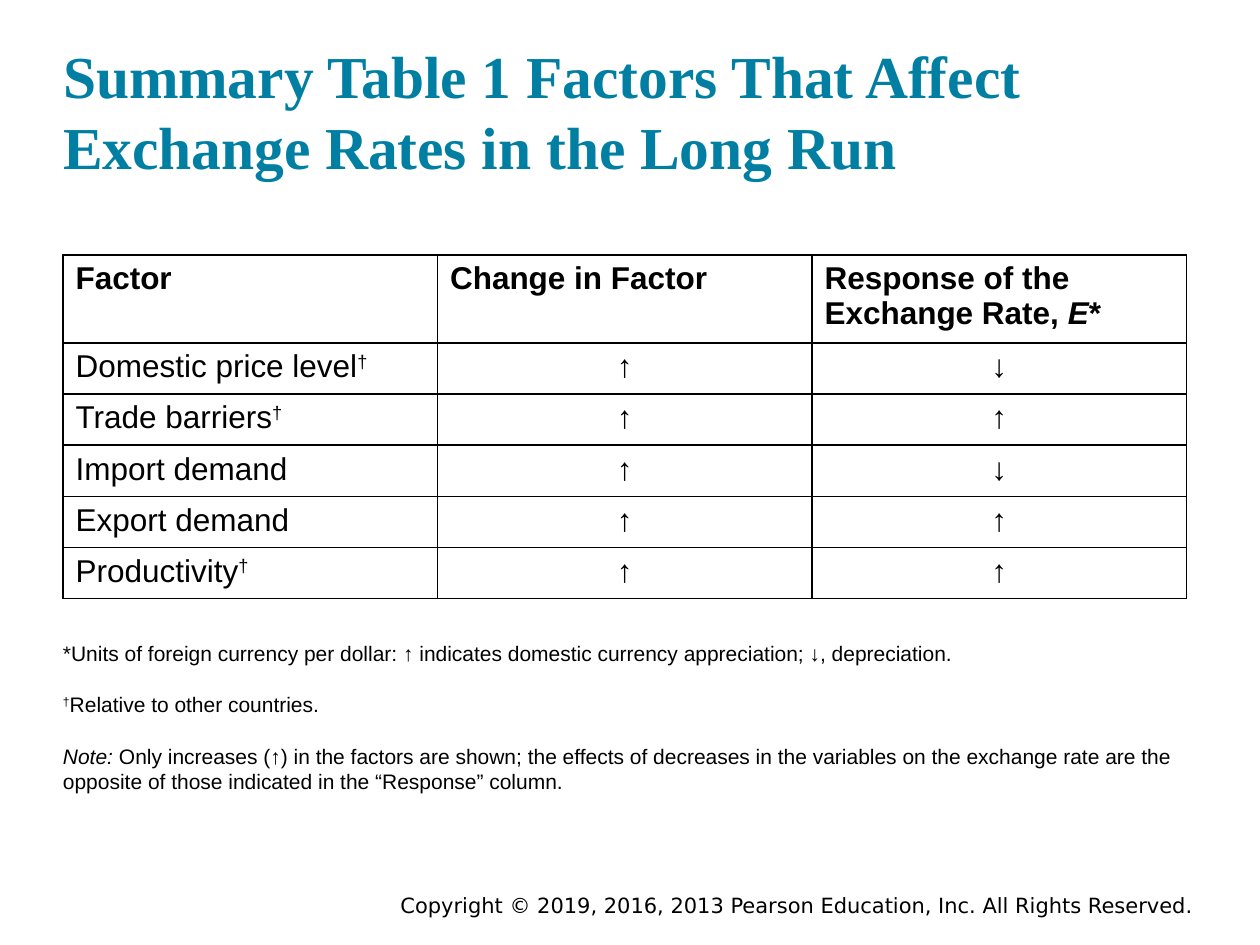
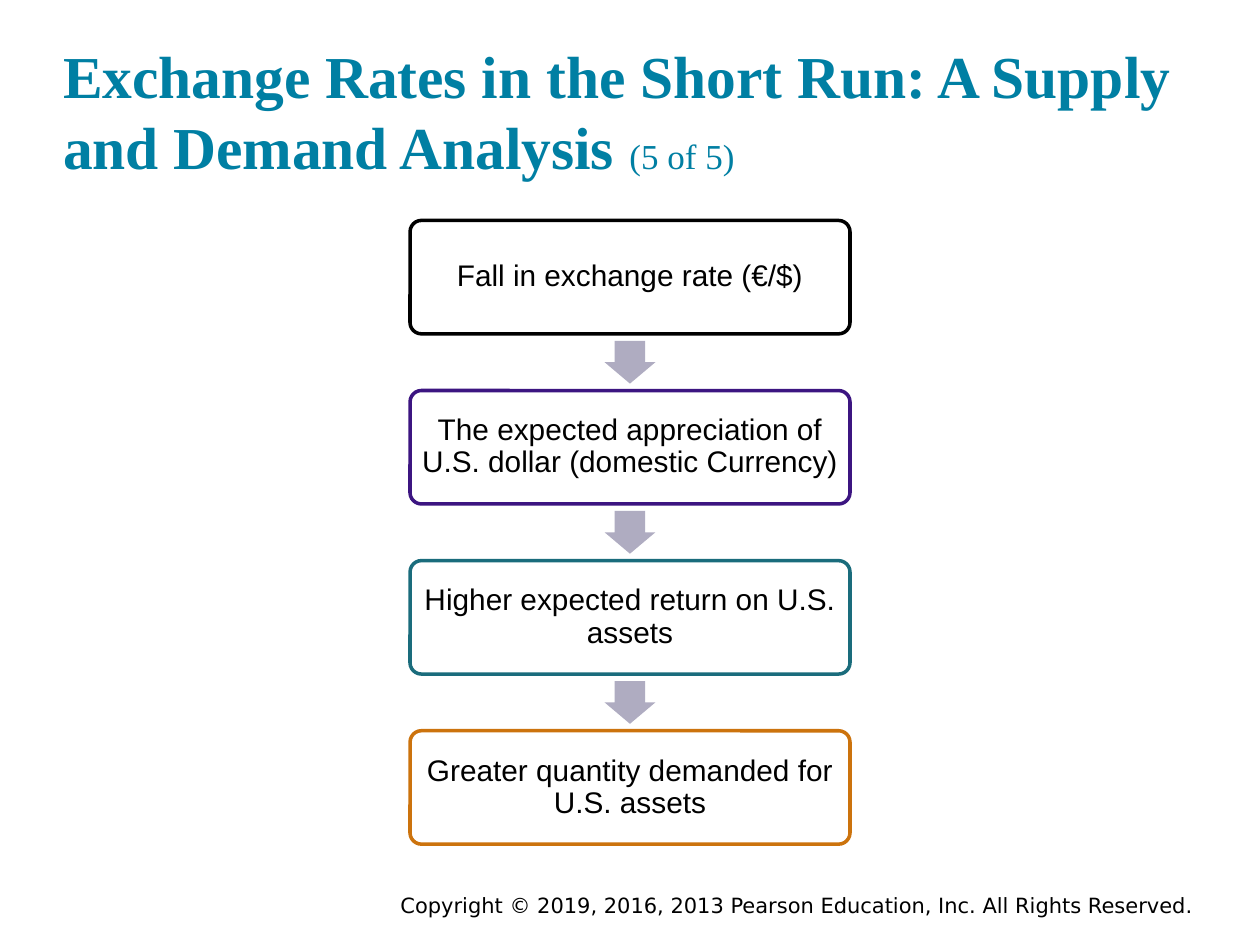
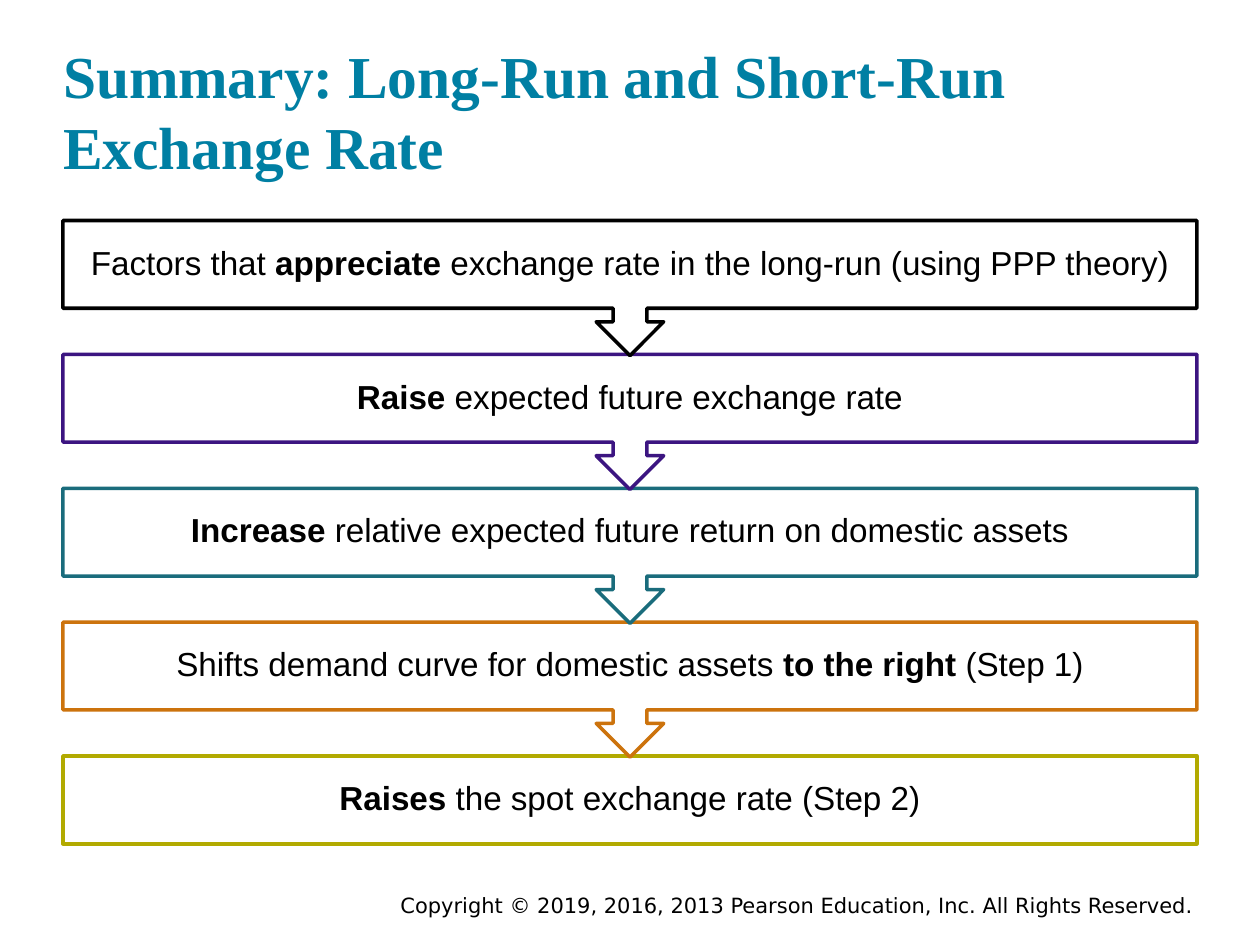
from dataclasses import dataclass

from lxml.etree import SubElement
from pptx import Presentation
from pptx.dml.color import RGBColor
from pptx.enum.shapes import MSO_SHAPE
from pptx.enum.text import MSO_ANCHOR, MSO_AUTO_SIZE, PP_ALIGN
from pptx.oxml.ns import qn
from pptx.util import Pt

BLACK = RGBColor(0x00, 0x00, 0x00)
WHITE = RGBColor(0xFF, 0xFF, 0xFF)
TEAL_TITLE = RGBColor(0x00, 0x7F, 0xA3)
PURPLE = RGBColor(0x3C, 0x15, 0x81)
TEAL = RGBColor(0x1A, 0x6C, 0x7C)
ORANGE = RGBColor(0xCC, 0x73, 0x0D)
OLIVE = RGBColor(0xB2, 0xAA, 0x00)
GREY_ARROW = RGBColor(0xAF, 0xAC, 0xC1)
STEP_COLORS = [BLACK, PURPLE, TEAL, ORANGE, OLIVE]

SLIDE_W, SLIDE_H = 720, 540
MARGIN = 36
CONTENT_W = SLIDE_W - 2 * MARGIN
FLOW_TOP = 126
BODY_FONT = "Arial"
COPYRIGHT = "Copyright © 2019, 2016, 2013 Pearson Education, Inc. All Rights Reserved."


@dataclass(frozen=True)
class Span:
    text: str
    bold: bool | None = None
    italic: bool | None = None
    raised: bool = False
    size: float | None = None


@dataclass(frozen=True)
class Box:
    left: float
    top: float
    width: float
    height: float

    def emu(self) -> tuple:
        return Pt(self.left), Pt(self.top), Pt(self.width), Pt(self.height)


Text = list[Span]
DAGGER = Span("†", raised=True)


def write(p, spans: Text, size: float, color: RGBColor = BLACK, name: str = BODY_FONT,
          align: PP_ALIGN = PP_ALIGN.LEFT, bold: bool = False) -> None:
    p.alignment = align
    p.font.size, p.font.name, p.font.bold = Pt(size), name, bold
    p.font.color.rgb = color
    for span in spans:
        r = p.add_run()
        r.text = span.text
        if span.bold is not None:
            r.font.bold = span.bold
        if span.italic is not None:
            r.font.italic = span.italic
        if span.size is not None:
            r.font.size = Pt(span.size)
        if span.raised:
            r.font._element.set("baseline", "30000")


def set_insets(tf, inset: float) -> None:
    tf.margin_left = tf.margin_right = tf.margin_top = tf.margin_bottom = Pt(inset)


def add_slide(prs, title: Text):
    s = prs.slides.add_slide(prs.slide_layouts[5])
    sp = s.shapes.title
    sp.left, sp.top, sp.width, sp.height = Box(MARGIN, 17.3, CONTENT_W, 86.4).emu()
    tf = sp.text_frame
    tf.word_wrap = True
    tf.auto_size = MSO_AUTO_SIZE.NONE
    tf.vertical_anchor = MSO_ANCHOR.BOTTOM
    set_insets(tf, 0)
    write(tf.paragraphs[0], title, 34, TEAL_TITLE, "Times New Roman", bold=True)
    footer = s.shapes.add_textbox(*Box(212.4, 506.2, 486, 21.6).emu()).text_frame
    footer.word_wrap = True
    write(footer.paragraphs[0], [Span(COPYRIGHT)], 12, name="DejaVu Sans",
          align=PP_ALIGN.CENTER)
    return s


def add_filled(s, kind: MSO_SHAPE, box: Box, fill: RGBColor, line: RGBColor | None = None):
    sp = s.shapes.add_shape(kind, *box.emu())
    sp.shadow.inherit = False
    sp.fill.solid()
    sp.fill.fore_color.rgb = fill
    if line is None:
        sp.line.fill.background()
    else:
        sp.line.color.rgb = line
        sp.line.width = Pt(2)
    return sp


def add_step(s, kind: MSO_SHAPE, box: Box, line: RGBColor, spans: Text, size: float,
             inset: float):
    sp = add_filled(s, kind, box, WHITE, line)
    tf = sp.text_frame
    tf.word_wrap = True
    tf.vertical_anchor = MSO_ANCHOR.MIDDLE
    set_insets(tf, inset)
    p = tf.paragraphs[0]
    p.line_spacing = 0.9
    write(p, spans, size, align=PP_ALIGN.CENTER)
    return sp


def set_borders(cell) -> None:
    tc_pr = cell._tc.get_or_add_tcPr()
    for index, side in enumerate(("lnL", "lnR", "lnT", "lnB")):
        ln = tc_pr.makeelement(qn(f"a:{side}"), {"w": str(Pt(1))})
        tc_pr.insert(index, ln)
        SubElement(SubElement(ln, qn("a:solidFill")), qn("a:srgbClr"), val=str(BLACK))


def add_factor_table(s, rows: list[list[Text]]) -> None:
    header_h, row_h = 47.4, 29.2
    box = Box(MARGIN, 145.6, 642, header_h + row_h * (len(rows) - 1))
    table = s.shapes.add_table(len(rows), len(rows[0]), *box.emu()).table
    table.first_row = table.horz_banding = False
    for column in table.columns:
        column.width = Pt(box.width / len(rows[0]))
    for i, row in enumerate(rows):
        table.rows[i].height = Pt(row_h if i else header_h)
        for j, spans in enumerate(row):
            cell = table.cell(i, j)
            cell.fill.background()
            set_borders(cell)
            align = PP_ALIGN.CENTER if i and j else PP_ALIGN.LEFT
            write(cell.text_frame.paragraphs[0], spans, 18, align=align, bold=i == 0)


def add_notes_below(s, notes: list[Text]) -> None:
    tf = s.shapes.add_textbox(*Box(MARGIN, 365.8, CONTENT_W, 116.6).emu()).text_frame
    tf.word_wrap = True
    set_insets(tf, 0)
    for i, spans in enumerate(notes):
        p = tf.add_paragraph() if i else tf.paragraphs[0]
        if i:
            p.space_before = Pt(15)
        write(p, spans, 12)


def build_factors(prs) -> None:
    s = add_slide(prs, [Span("Summary Table 1 Factors That Affect Exchange Rates in the Long Run")])
    header = [
        [Span("Factor")],
        [Span("Change in Factor")],
        [Span("Response of the Exchange Rate, "), Span("E", italic=True), Span("*")],
    ]
    responses = [
        ([Span("Domestic price level"), DAGGER], "↓"),
        ([Span("Trade barriers"), DAGGER], "↑"),
        ([Span("Import demand")], "↓"),
        ([Span("Export demand")], "↑"),
        ([Span("Productivity"), DAGGER], "↑"),
    ]
    add_factor_table(s, [header] + [[factor, [Span("↑")], [Span(response)]]
                                    for factor, response in responses])
    add_notes_below(s, [
        [Span("*Units of foreign currency per dollar: ↑ indicates domestic currency "
              "appreciation; ↓, depreciation.")],
        [DAGGER, Span("Relative to other countries.")],
        [Span("Note: ", italic=True),
         Span("Only increases (↑) in the factors are shown; the effects of decreases in the "
              "variables on the exchange rate are the opposite of those indicated in the "
              "“Response” column.")],
    ])


def build_short_run(prs) -> None:
    s = add_slide(prs, [
        Span("Exchange Rates in the Short Run: A Supply and Demand Analysis "),
        Span("(5 of 5)", bold=False, size=20),
    ])
    steps = [
        "Fall in exchange rate (€/$)",
        "The expected appreciation of U.S. dollar (domestic Currency)",
        "Higher expected return on U.S. assets",
        "Greater quantity demanded for U.S. assets",
    ]
    box_w, box_h, pitch = 251.4, 64.8, 97.2
    arrow_w, arrow_h = 29, 24.4
    for i, (text, color) in enumerate(zip(steps, STEP_COLORS)):
        top = FLOW_TOP + i * pitch
        box = Box((SLIDE_W - box_w) / 2, top, box_w, box_h)
        sp = add_step(s, MSO_SHAPE.ROUNDED_RECTANGLE, box, color, [Span(text)], 17, 5)
        sp.adjustments[0] = 0.1
        if i < len(steps) - 1:
            arrow_top = top + box_h + (pitch - box_h - arrow_h) / 2
            arrow = add_filled(s, MSO_SHAPE.DOWN_ARROW,
                               Box((SLIDE_W - arrow_w) / 2, arrow_top, arrow_w, arrow_h),
                               GREY_ARROW)
            arrow.adjustments[0] = 0.6
            arrow.adjustments[1] = 0.5


def build_summary(prs) -> None:
    s = add_slide(prs, [Span("Summary: Long-Run and Short-Run Exchange Rate")])
    steps = [
        [Span("Factors that "), Span("appreciate", bold=True),
         Span(" exchange rate in the long-run (using PPP theory)")],
        [Span("Raise", bold=True), Span(" expected future exchange rate")],
        [Span("Increase", bold=True),
         Span(" relative expected future return on domestic assets")],
        [Span("Shifts demand curve for domestic assets "), Span("to the right ", bold=True),
         Span("(Step 1)")],
        [Span("Raises", bold=True), Span(" the spot exchange rate (Step 2)")],
    ]
    pitch, callout_h, last_h = 76.5, 77.2, 50.2
    last = len(steps) - 1
    for i in range(last, -1, -1):
        kind = MSO_SHAPE.RECTANGLE if i == last else MSO_SHAPE.DOWN_ARROW_CALLOUT
        height = last_h if i == last else callout_h
        box = Box(MARGIN, FLOW_TOP + i * pitch, CONTENT_W, height)
        add_step(s, kind, box, STEP_COLORS[i], steps[i], 19, 10.6)


def main() -> None:
    prs = Presentation()
    prs.slide_width, prs.slide_height = Pt(SLIDE_W), Pt(SLIDE_H)
    build_factors(prs)
    build_short_run(prs)
    build_summary(prs)
    prs.save("out.pptx")


if __name__ == "__main__":
    main()
